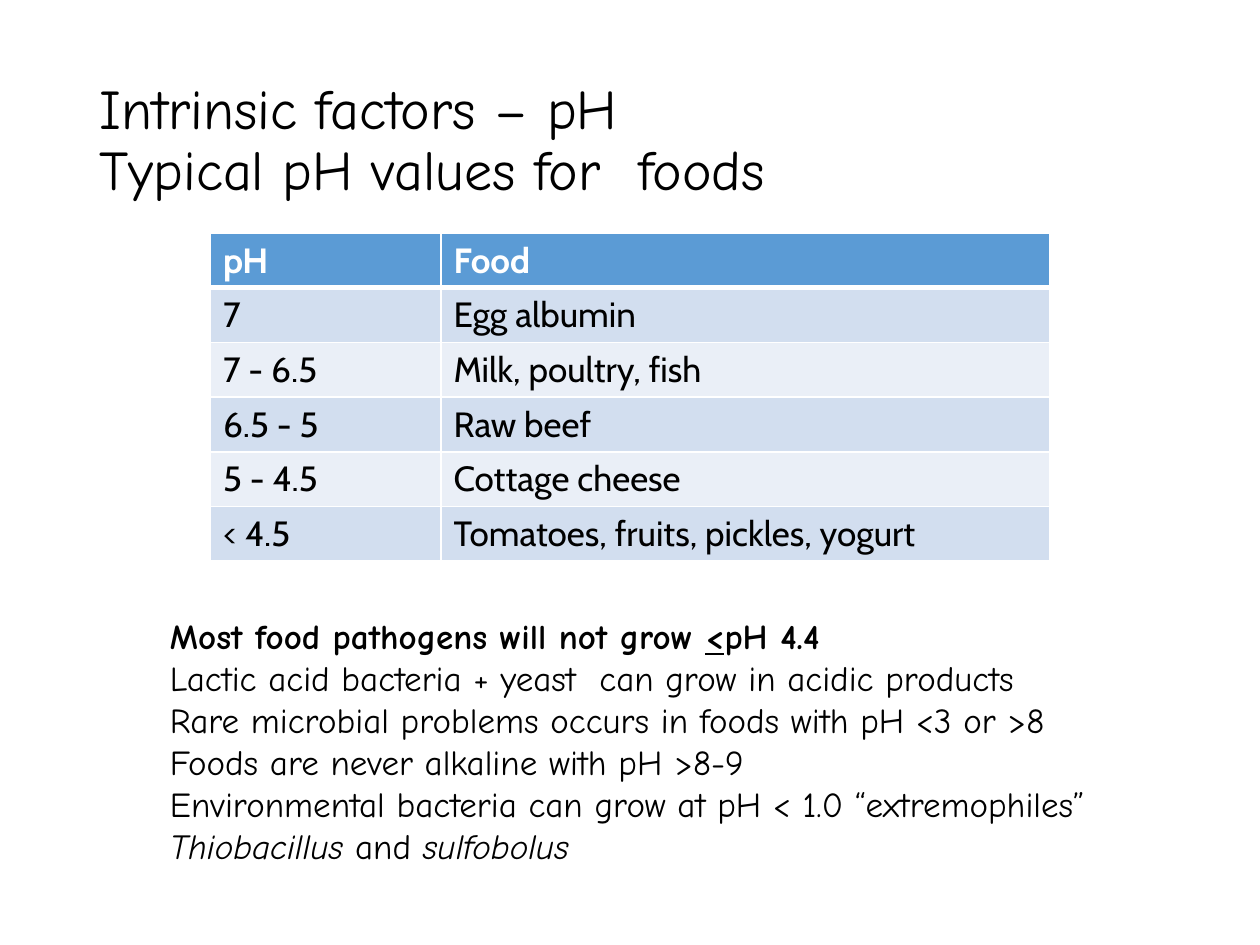
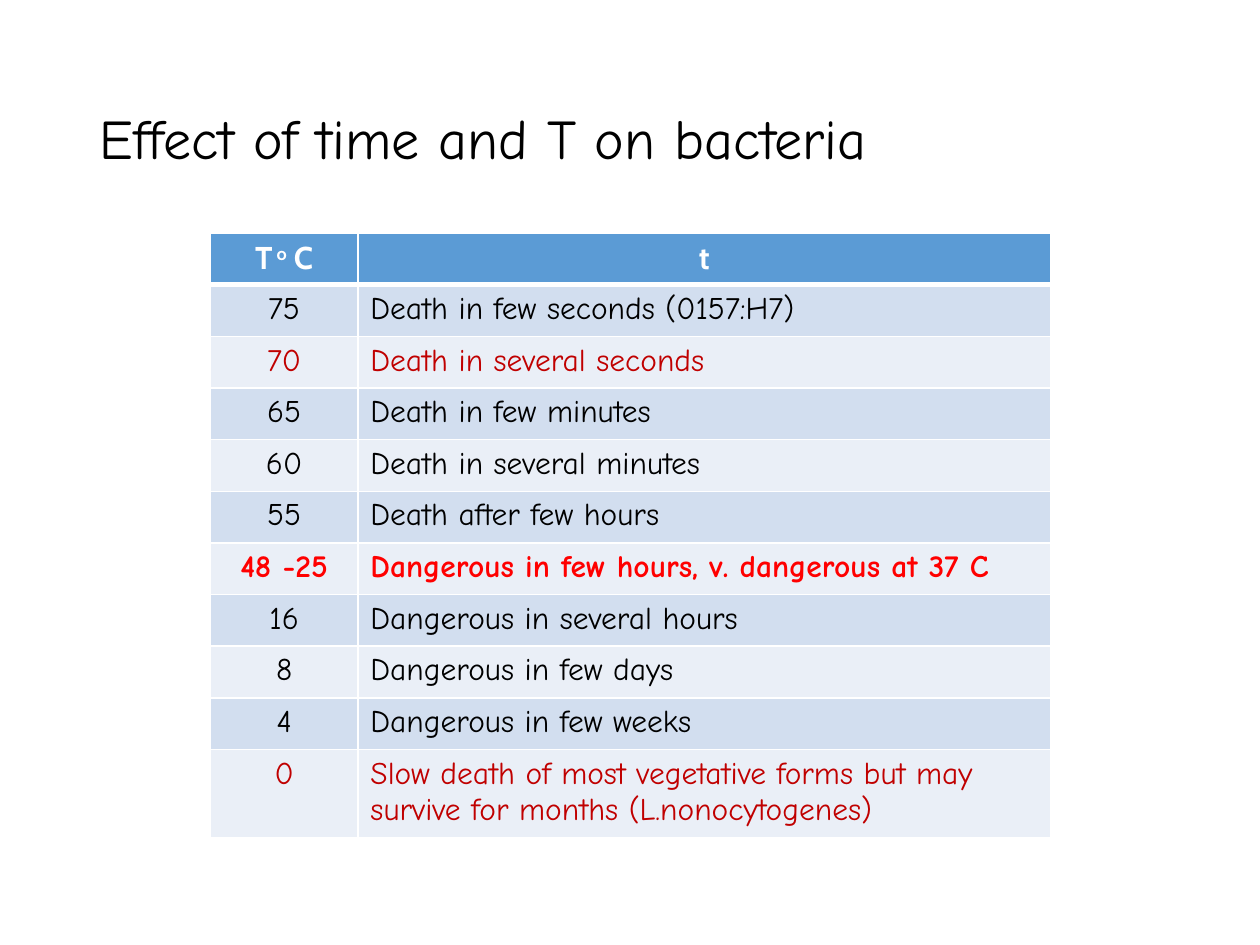
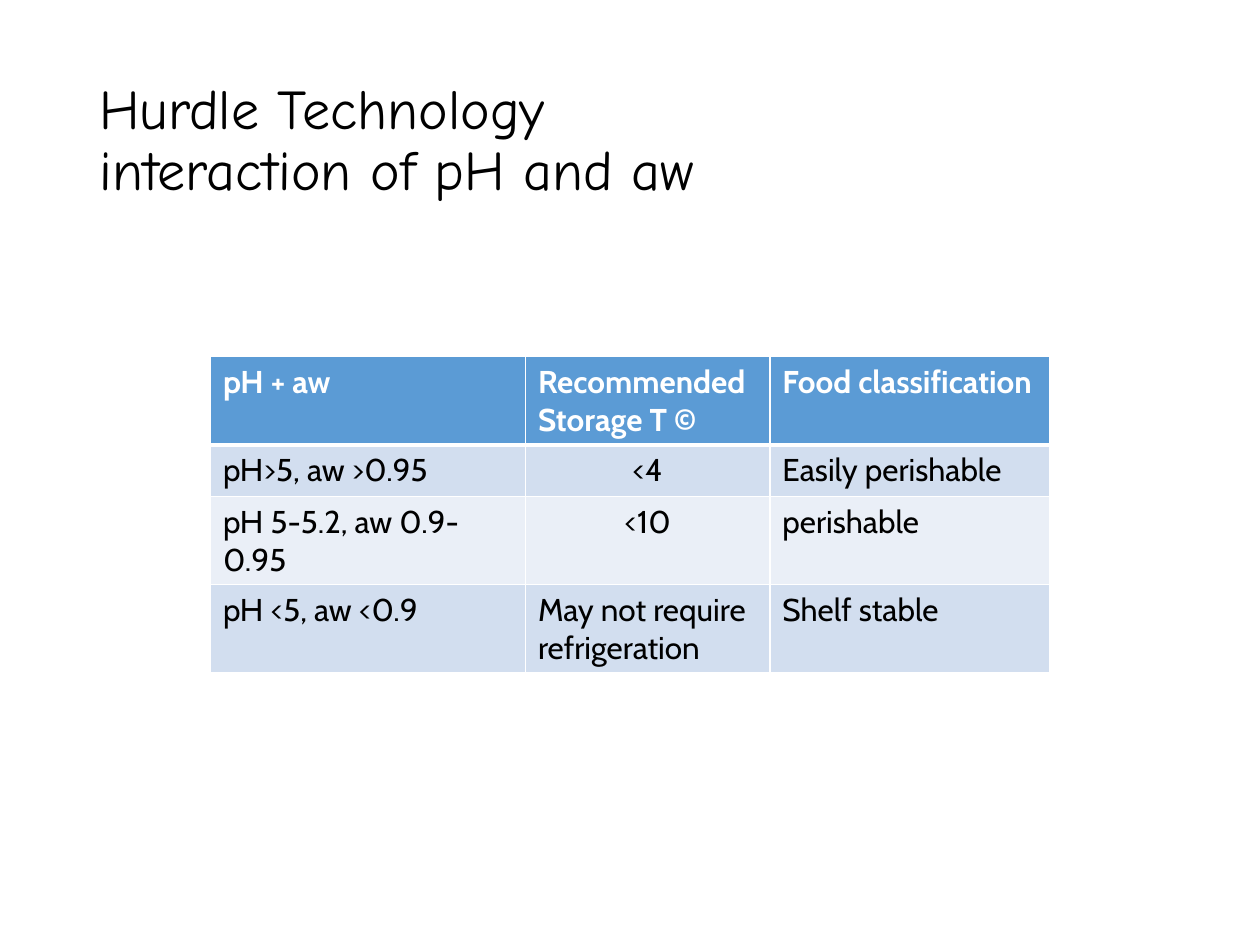
from lxml.etree import SubElement
from pptx import Presentation
from pptx.dml.color import RGBColor
from pptx.enum.text import MSO_ANCHOR as Anchor, PP_ALIGN as Align
from pptx.oxml.ns import qn
from pptx.util import Inches, Pt

HAND, SANS = "Comic Neue", "Cabin"
BLACK, WHITE, DARK_RED, RED = "000000", "FFFFFF", "C00000", "FF0000"
HEADER, BANDS = "5B9BD5", ("D2DEEF", "EAEFF7")
TITLE_BOX = (0.69, 0.4, 8.62, 1.45)
TABLE_LEFT, ROW_HEIGHT = 1.67, 0.41


def rgb(value):
    return RGBColor.from_string(value)


def write(paragraph, text, size=18, font=HAND, color=BLACK, align=Align.LEFT,
          spacing=None, bold=False):
    """Write a string, or a list of strings and (string, run format) pairs."""
    paragraph.alignment = align
    if spacing:
        paragraph.line_spacing = spacing
    for part in [text] if isinstance(text, str) else text:
        words, extra = (part, {}) if isinstance(part, str) else part
        for number, line in enumerate(words.split("\n")):
            if number:
                paragraph.add_line_break()
            run = paragraph.add_run()
            run.text = line
            run.font.name, run.font.size = font, Pt(size)
            run.font.color.rgb = rgb(color)
            run.font.bold = bold
            run.font.italic = extra.get("italic")
            run.font.underline = extra.get("underline")
            if "raised" in extra:
                run.font._element.set("baseline", str(extra["raised"] * 1000))


def add_text(slide, box, paragraphs, anchor=Anchor.TOP, **style):
    """Each paragraph is its text and the format that differs from style."""
    frame = slide.shapes.add_textbox(*map(Inches, box)).text_frame
    frame.word_wrap = True
    frame.vertical_anchor = anchor
    for number, (text, changes) in enumerate(paragraphs):
        paragraph = frame.add_paragraph() if number else frame.paragraphs[0]
        write(paragraph, text, **{**style, **changes})


def add_title(slide, text):
    add_text(slide, TITLE_BOX, [(text, {})], anchor=Anchor.MIDDLE, size=32, spacing=0.9)


def set_borders(cell, **widths):
    properties = cell._tc.get_or_add_tcPr()
    for side in "LRTB":
        line = SubElement(properties, qn(f"a:ln{side}"), w=str(Pt(widths.get(side, 1))))
        SubElement(SubElement(line, qn("a:solidFill")), qn("a:srgbClr"), val=WHITE)


def add_table(slide, top, widths, rows, size=18, font=SANS, centred=(), row_styles=None):
    """centred holds (row, column) pairs; row_styles maps a row to its format."""
    frame = slide.shapes.add_table(
        len(rows), len(widths), Inches(TABLE_LEFT), Inches(top),
        Inches(sum(widths)), Inches(ROW_HEIGHT * len(rows)))
    table = frame.table
    for column, width in zip(table.columns, widths):
        column.width = Inches(width)
    for r, texts in enumerate(rows):
        table.rows[r].height = Inches(ROW_HEIGHT)
        if r == 0:
            style = {"font": SANS, "color": WHITE, "bold": True}
            fill, borders = HEADER, {"B": 3}
        else:
            style = {"font": font, **(row_styles or {}).get(r, {})}
            fill, borders = BANDS[(r - 1) % 2], {"T": 3 if r == 1 else 1}
        for c, text in enumerate(texts):
            cell = table.cell(r, c)
            set_borders(cell, **borders)
            cell.fill.solid()
            cell.fill.fore_color.rgb = rgb(fill)
            align = Align.CENTER if (r, c) in centred else Align.LEFT
            write(cell.text_frame.paragraphs[0], text, size=size, align=align, **style)


def build_ph_slide(slide):
    add_title(slide, "Intrinsic factors – pH \nTypical pH values for  foods")
    add_table(slide, 1.85, (1.83, 4.83), [
        ("pH", "Food"),
        ("7", "Egg albumin"),
        ("7 - 6.5", "Milk, poultry, fish"),
        ("6.5 - 5", "Raw beef"),
        ("5 - 4.5", "Cottage cheese"),
        ("< 4.5", "Tomatoes, fruits, pickles, yogurt"),
    ], size=20)
    # Growth limits below the table
    add_text(slide, (1.25, 4.83, 8.08, 2.12), [
        (["Most food pathogens will not grow ", ("<", {"underline": True}), "pH 4.4"],
         {"bold": True}),
        ("Lactic acid bacteria + yeast  can grow in acidic products", {}),
        ("Rare microbial problems occurs in foods with pH <3 or >8", {}),
        ("Foods are never alkaline with pH >8-9", {}),
        ("Environmental bacteria can grow at pH < 1.0 “extremophiles”", {}),
        ([("Thiobacillus", {"italic": True}), " and ", ("sulfobolus", {"italic": True})], {}),
    ], size=20)


def build_temperature_slide(slide):
    add_title(slide, "Effect of time and T on bacteria")
    rows = [
        (["T", (" o", {"raised": 30}), " C"], "t"),
        ("75", "Death in few seconds (0157:H7)"),
        ("70", "Death in several seconds"),
        ("65", "Death in few minutes"),
        ("60", "Death in several minutes"),
        ("55", "Death after few hours"),
        ("48 -25", "Dangerous in few hours, v. dangerous at 37 C"),
        ("16", "Dangerous in several hours"),
        ("8", "Dangerous in few days"),
        ("4", "Dangerous in few weeks"),
        ("0", "Slow death of most vegetative forms but may survive for months "
              "(L.nonocytogenes)"),
    ]
    add_table(slide, 1.85, (1.17, 5.5), rows, font=HAND,
              centred={(0, 1)} | {(r, 0) for r in range(len(rows))},
              row_styles={2: {"color": DARK_RED}, 6: {"color": RED, "bold": True},
                          10: {"color": DARK_RED}})


def build_hurdle_slide(slide):
    add_title(slide, "Hurdle Technology\ninteraction of pH and aw")
    add_table(slide, 2.83, (2.5, 1.94, 2.22), [
        ("pH + aw", "Recommended Storage T ©", "Food classification"),
        ("pH>5, aw >0.95", "<4", "Easily perishable"),
        ("pH 5-5.2, aw 0.9-0.95", "<10", "perishable"),
        ("pH <5, aw <0.9", "May not require refrigeration", "Shelf stable"),
    ], centred={(1, 1), (2, 1)})


def main():
    presentation = Presentation()
    presentation.slide_width, presentation.slide_height = Inches(10), Inches(7.5)
    for build in (build_ph_slide, build_temperature_slide, build_hurdle_slide):
        build(presentation.slides.add_slide(presentation.slide_layouts[6]))
    presentation.save("out.pptx")


if __name__ == "__main__":
    main()
